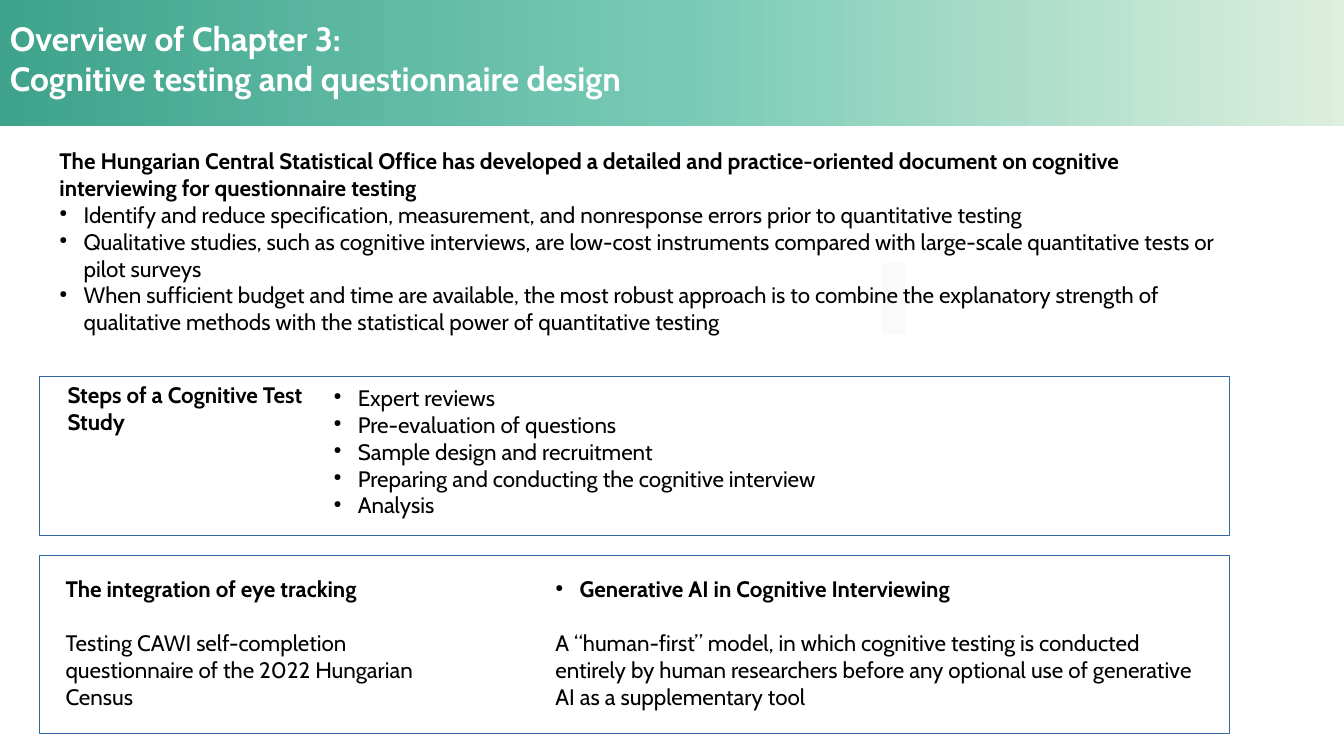
from dataclasses import dataclass
from typing import Optional

import lxml.etree
import pptx
import pptx.dml.color
import pptx.enum.shapes
import pptx.enum.text
import pptx.oxml.ns
import pptx.shapes.autoshape
import pptx.slide
import pptx.util

Pt = pptx.util.Pt
RGBColor = pptx.dml.color.RGBColor
qn = pptx.oxml.ns.qn

# Colours
WHITE = RGBColor(0xFF, 0xFF, 0xFF)
BLACK = RGBColor(0x00, 0x00, 0x00)
PALE_GREY = RGBColor(0xF9, 0xFA, 0xF9)
FRAME_BLUE = RGBColor(0x34, 0x65, 0xA4)
BANNER_STOPS = {
    0: RGBColor(0x3F, 0xA3, 0x8B),
    50: RGBColor(0x77, 0xCA, 0xB5),
    100: RGBColor(0xDD, 0xEF, 0xDF),
}

# Shared measures in points
BULLET_INDENT = 17.28
LINE_GAP = 19.4
TITLE_FONT = {"name": "Cabin", "size": Pt(24), "bold": True}
BODY_FONT = {"name": "Cabin", "size": Pt(16), "bold": False}
TITLE_INSETS = (7.2, 3.6)


@dataclass(frozen=True)
class Box:
    left: float
    top: float
    width: float
    height: float

    def lengths(self) -> list[pptx.util.Length]:
        return [Pt(v) for v in (self.left, self.top, self.width, self.height)]


@dataclass(frozen=True)
class Line:
    text: str
    bold: bool = False
    bullet: bool = False
    space_before: float = 0


@dataclass(frozen=True)
class TextBlock:
    box: Box
    lines: list[Line]


def add_rectangle(slide: pptx.slide.Slide, box: Box, fill: Optional[RGBColor] = None,
                  outline: Optional[RGBColor] = None) -> pptx.shapes.autoshape.Shape:
    rectangle = slide.shapes.add_shape(
        pptx.enum.shapes.MSO_SHAPE.RECTANGLE, *box.lengths())
    rectangle.shadow.inherit = False
    for part, colour in ((rectangle.fill, fill), (rectangle.line.fill, outline)):
        if colour is None:
            part.background()
        else:
            part.solid()
            part.fore_color.rgb = colour
    if outline is not None:
        rectangle.line.width = Pt(0)
    return rectangle


def add_banner(slide: pptx.slide.Slide, box: Box) -> None:
    banner = add_rectangle(slide, box)
    banner.fill.gradient()
    banner.fill.gradient_angle = 0
    stops = banner._element.spPr.find(".//" + qn("a:gsLst"))
    for stop in list(stops):
        stops.remove(stop)
    for percent, colour in BANNER_STOPS.items():
        stop = lxml.etree.SubElement(stops, qn("a:gs"), pos=str(percent * 1000))
        lxml.etree.SubElement(stop, qn("a:srgbClr"), val=str(colour))


def add_bullet(paragraph) -> None:
    properties = paragraph._p.get_or_add_pPr()
    properties.set("marL", str(Pt(BULLET_INDENT)))
    properties.set("indent", str(-Pt(BULLET_INDENT)))
    colour = lxml.etree.SubElement(properties, qn("a:buClr"))
    lxml.etree.SubElement(colour, qn("a:srgbClr"), val=str(BLACK))
    lxml.etree.SubElement(properties, qn("a:buSzPct"), val="45000")
    lxml.etree.SubElement(properties, qn("a:buChar"), char="●")


def add_text(slide: pptx.slide.Slide, block: TextBlock, font: dict, colour: RGBColor,
             insets: tuple[float, float] = (0, 0)) -> None:
    frame = slide.shapes.add_textbox(*block.box.lengths()).text_frame
    side, end = map(Pt, insets)
    frame_format = {
        "word_wrap": True,
        "auto_size": pptx.enum.text.MSO_AUTO_SIZE.SHAPE_TO_FIT_TEXT,
        "margin_left": side, "margin_right": side,
        "margin_top": end, "margin_bottom": end,
    }
    for key, value in frame_format.items():
        setattr(frame, key, value)
    for index, line in enumerate(block.lines):
        paragraph = frame.add_paragraph() if index else frame.paragraphs[0]
        if line.space_before:
            paragraph.space_before = Pt(line.space_before)
        if line.bullet:
            add_bullet(paragraph)
        run = paragraph.add_run()
        run.text = line.text
        for key, value in {**font, "bold": line.bold}.items():
            setattr(run.font, key, value)
        run.font.color.rgb = colour


# Content
TITLE = TextBlock(Box(0, 9.36, 936, 64.8), [
    Line("Overview of Chapter 3:", bold=True),
    Line("Cognitive testing and questionnaire design", bold=True),
])
BODY = [
    TextBlock(Box(42.48, 105.12, 835.92, 137.52), [
        Line("The Hungarian Central Statistical Office has developed a detailed and "
             "practice-oriented document on cognitive interviewing for questionnaire testing",
             bold=True),
        Line("Identify and reduce specification, measurement, and nonresponse errors "
             "prior to quantitative testing", bullet=True),
        Line("Qualitative studies, such as cognitive interviews, are low-cost instruments "
             "compared with large-scale quantitative tests or pilot surveys", bullet=True),
        Line("When sufficient budget and time are available, the most robust approach is to "
             "combine the explanatory strength of qualitative methods with the statistical "
             "power of quantitative testing", bullet=True),
    ]),
    TextBlock(Box(48.24, 272.16, 169.92, 67.68), [
        Line("Steps of a Cognitive Test Study", bold=True),
    ]),
    TextBlock(Box(238.32, 274.32, 623.52, 92.16), [
        Line(step, bullet=True) for step in (
            "Expert reviews", "Pre-evaluation of questions", "Sample design and recruitment",
            "Preparing and conducting the cognitive interview", "Analysis")
    ]),
    TextBlock(Box(46.8, 411.12, 280.08, 96.48), [
        Line("The integration of eye tracking", bold=True),
        Line("Testing CAWI self-completion questionnaire of the 2022 Hungarian Census",
             space_before=LINE_GAP),
    ]),
    TextBlock(Box(396.72, 411.12, 465.12, 115.2), [
        Line("Generative AI in Cognitive Interviewing", bold=True, bullet=True),
        Line("A “human-first” model, in which cognitive testing is conducted entirely by "
             "human researchers before any optional use of generative AI as a supplementary "
             "tool", space_before=LINE_GAP),
    ]),
]
FRAMES = [Box(28.08, 269.28, 850.32, 113.04), Box(28.08, 396.72, 850.32, 127.44)]


def main() -> None:
    presentation = pptx.Presentation()
    presentation.slide_width, presentation.slide_height = Pt(960), Pt(540)
    slide = presentation.slides.add_slide(presentation.slide_layouts[6])

    # Banner and title
    add_banner(slide, Box(0, 0, 960, 90))
    add_text(slide, TITLE, TITLE_FONT, WHITE, TITLE_INSETS)

    # Pale block and section frames
    add_rectangle(slide, Box(630, 187.92, 16.56, 51.12), fill=PALE_GREY)
    for frame in FRAMES:
        add_rectangle(slide, frame, outline=FRAME_BLUE)

    # Body text
    for block in BODY:
        add_text(slide, block, BODY_FONT, BLACK)

    presentation.save("out.pptx")


if __name__ == "__main__":
    main()
